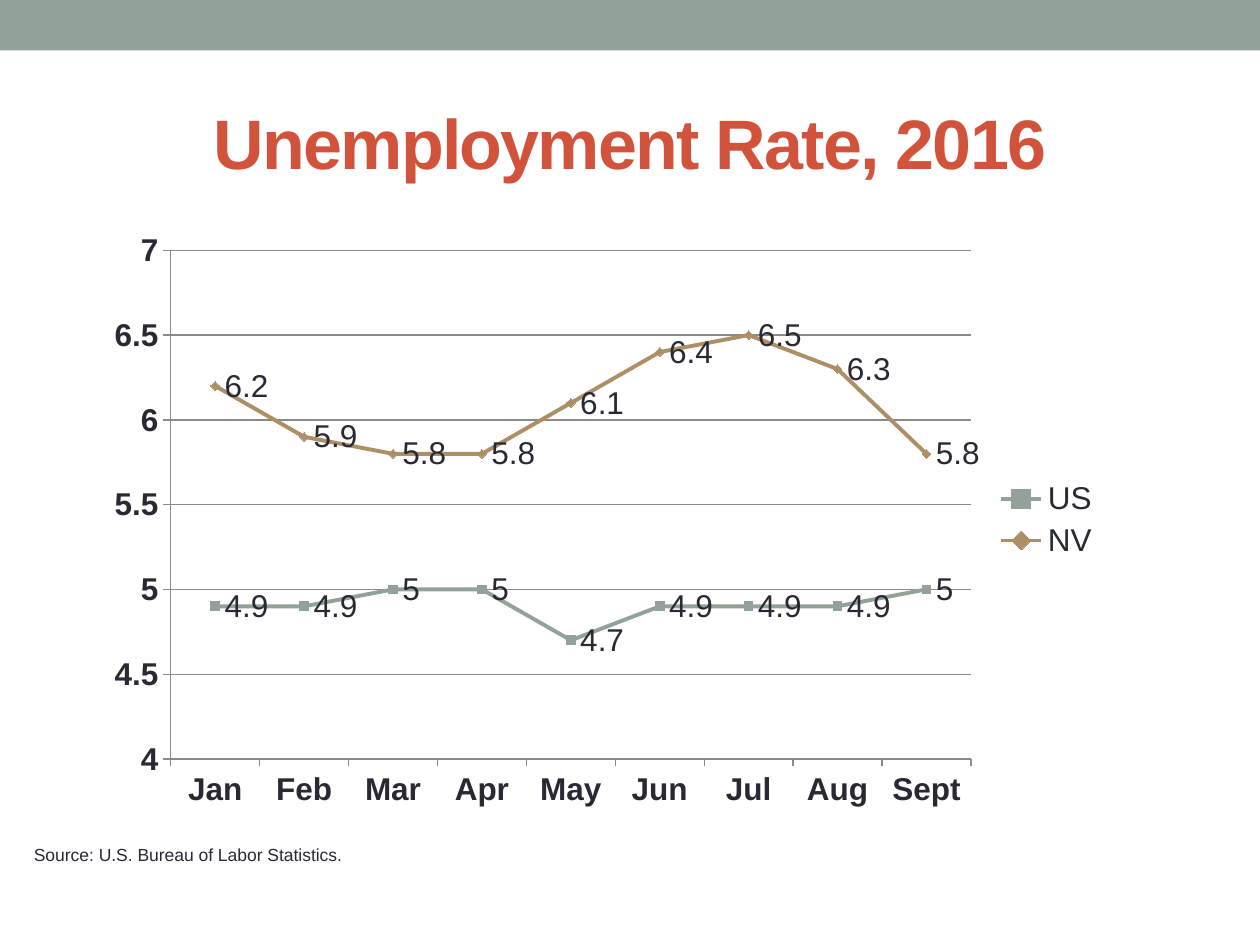
from lxml import etree
from pptx import Presentation
from pptx.chart import data as chart_data
from pptx.dml.color import RGBColor
from pptx.enum import chart as charts, shapes, text
from pptx.oxml import ns
from pptx.util import Inches, Pt

FONT = "Arial"
SAGE = RGBColor(0x93, 0xA2, 0x99)
TAN = RGBColor(0xAD, 0x8F, 0x67)
RED = RGBColor(0xD2, 0x53, 0x3C)
INK = RGBColor(0x29, 0x29, 0x34)
GRAY = RGBColor(0x8A, 0x8A, 0x8A)

TITLE = "Unemployment Rate, 2016"
SOURCE = "Source: U.S. Bureau of Labor Statistics."
MONTHS = ["Jan", "Feb", "Mar", "Apr", "May", "Jun", "Jul", "Aug", "Sept"]
RATES = [
    ("US", [4.9, 4.9, 5, 5, 4.7, 4.9, 4.9, 4.9, 5], SAGE, charts.XL_MARKER_STYLE.SQUARE),
    ("NV", [6.2, 5.9, 5.8, 5.8, 6.1, 6.4, 6.5, 6.3, 5.8], TAN, charts.XL_MARKER_STYLE.DIAMOND),
]
PLOT_LAYOUT = {"x": 0.075, "y": 0.05, "w": 0.786, "h": 0.85}


def format_font(font, size, color=INK, bold=False):
    font.name = FONT
    font.size = Pt(size)
    font.bold = bold
    font.color.rgb = color


def write_text(shape, content, size, color=INK, bold=False, align=text.PP_ALIGN.LEFT,
               anchor=text.MSO_ANCHOR.TOP, spacing=None):
    frame = shape.text_frame
    frame.word_wrap = True
    frame.vertical_anchor = anchor
    paragraph = frame.paragraphs[0]
    paragraph.alignment = align
    run = paragraph.add_run()
    run.text = content
    format_font(run.font, size, color, bold)
    if spacing is not None:
        run.font._element.set("spc", str(spacing * 100))
    return frame


def set_plot_layout(chart):
    plot_area = chart._chartSpace.chart.plotArea
    for old_layout in plot_area.findall(ns.qn("c:layout")):
        plot_area.remove(old_layout)
    layout = etree.Element(ns.qn("c:layout"))
    manual = etree.SubElement(layout, ns.qn("c:manualLayout"))
    settings = {"layoutTarget": "inner", "xMode": "edge", "yMode": "edge", **PLOT_LAYOUT}
    for name, value in settings.items():
        etree.SubElement(manual, ns.qn(f"c:{name}")).set("val", str(value))
    plot_area.insert(0, layout)


def add_rate_chart(slide):
    rates = chart_data.CategoryChartData()
    rates.categories = MONTHS
    for name, values, _, _ in RATES:
        rates.add_series(name, values)
    chart = slide.shapes.add_chart(
        charts.XL_CHART_TYPE.LINE_MARKERS,
        Inches(0.75), Inches(1.75), Inches(8.08), Inches(4.75), rates).chart
    format_font(chart.font, 18)
    chart.has_title = False
    chart.has_legend = True
    chart.legend.position = charts.XL_LEGEND_POSITION.RIGHT
    chart.legend.include_in_layout = False
    format_font(chart.legend.font, 18)

    for axis in (chart.category_axis, chart.value_axis):
        axis.major_tick_mark = charts.XL_TICK_MARK.OUTSIDE
        axis.minor_tick_mark = charts.XL_TICK_MARK.NONE
        axis.format.line.color.rgb = GRAY
        axis.format.line.width = Pt(0.75)
        format_font(axis.tick_labels.font, 18, bold=True)
    value_axis = chart.value_axis
    value_axis.minimum_scale, value_axis.maximum_scale, value_axis.major_unit = 4, 7, 0.5
    value_axis.has_major_gridlines = True
    value_axis.major_gridlines.format.line.color.rgb = GRAY
    value_axis.major_gridlines.format.line.width = Pt(0.75)

    for series, (_, _, color, marker_style) in zip(chart.plots[0].series, RATES):
        series.smooth = False
        series.format.line.color.rgb = color
        series.format.line.width = Pt(2.25)
        marker = series.marker
        marker.style = marker_style
        marker.size = 5
        marker.format.fill.solid()
        marker.format.fill.fore_color.rgb = color
        marker.format.line.color.rgb = color
        labels = series.data_labels
        labels.show_value = True
        labels.position = charts.XL_LABEL_POSITION.RIGHT
        format_font(labels.font, 18)
    set_plot_layout(chart)


def main():
    presentation = Presentation()
    presentation.slide_width, presentation.slide_height = Inches(10), Inches(7.5)
    slide = presentation.slides.add_slide(presentation.slide_layouts[5])

    band = slide.shapes.add_shape(
        shapes.MSO_SHAPE.RECTANGLE, 0, 0, presentation.slide_width, Inches(0.4))
    band.shadow.inherit = False
    band.fill.solid()
    band.fill.fore_color.rgb = SAGE
    band.line.fill.background()

    title = slide.shapes.title
    title.left, title.top = Inches(0.5), Inches(0.58)
    title.width, title.height = Inches(9), Inches(1.08)
    write_text(title, TITLE, 40, color=RED, bold=True, align=text.PP_ALIGN.CENTER,
               anchor=text.MSO_ANCHOR.MIDDLE, spacing=-1)

    add_rate_chart(slide)

    source = slide.shapes.add_textbox(Inches(0.17), Inches(6.65), Inches(8.75), Inches(0.27))
    write_text(source, SOURCE, 10).auto_size = text.MSO_AUTO_SIZE.SHAPE_TO_FIT_TEXT

    presentation.save("out.pptx")


if __name__ == "__main__":
    main()
